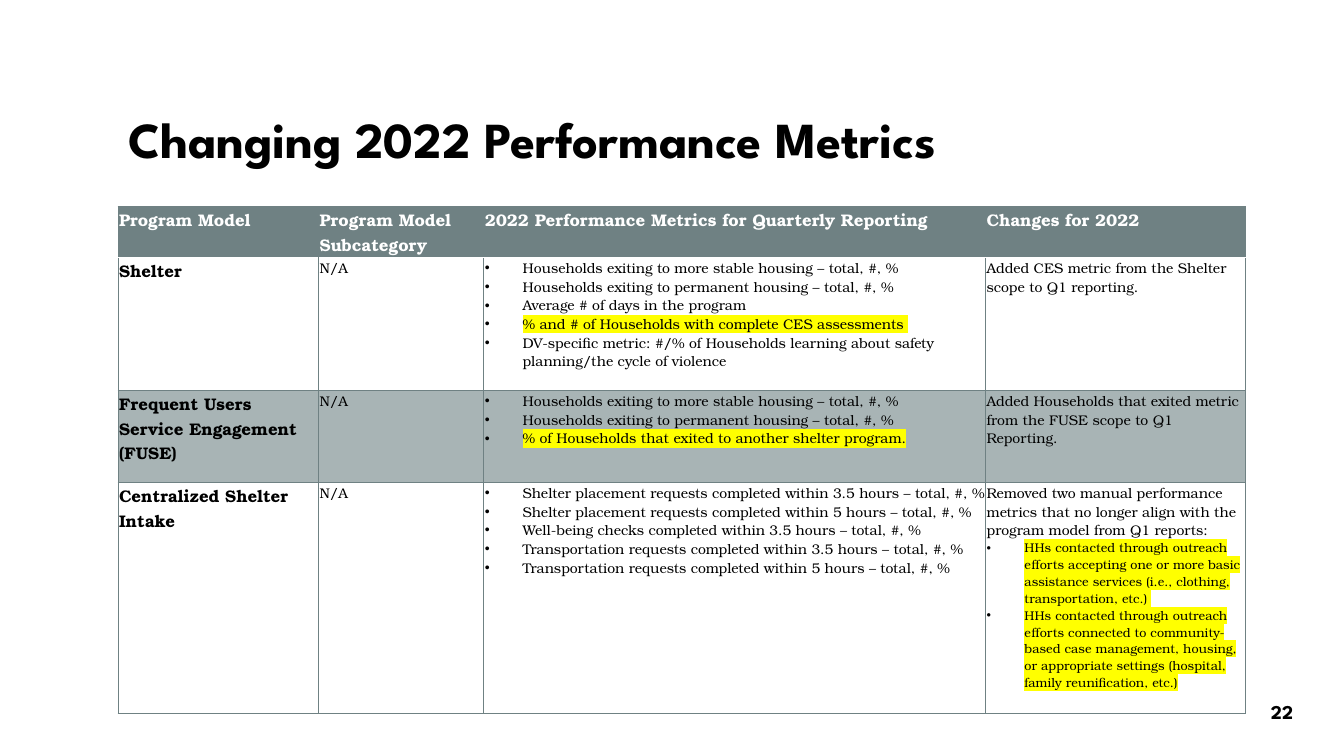
import pptx
import pptx.util
import pptx.dml.color
import pptx.enum.text
import pptx.oxml.ns
from lxml import etree

Pt = pptx.util.Pt
RGB = pptx.dml.color.RGBColor
ANCHOR = pptx.enum.text.MSO_ANCHOR
ALIGN = pptx.enum.text.PP_ALIGN
qn = pptx.oxml.ns.qn

BLACK = RGB(0x00, 0x00, 0x00)
WHITE = RGB(0xFF, 0xFF, 0xFF)
SLATE = RGB(0x6F, 0x81, 0x83)
MIST = RGB(0xA8, 0xB4, 0xB5)
YELLOW = RGB(0xFF, 0xFF, 0x00)
HEAD_FONT = "League Spartan"
BODY_FONT = "TeX Gyre Bonum"

TITLE = "Changing 2022 Performance Metrics"
NUMBER = "22"
STYLES = {
    "head": dict(size=12, bold=True, color=WHITE),
    "name": dict(size=12, bold=True),
    "plain": dict(size=10),
    "dot": dict(size=10, bullet=True),
    "hot": dict(size=10, bullet=True, mark=True),
    "small": dict(size=9, bullet=True, mark=True),
}
ROWS = [
    [
        [("head", "Program Model")],
        [("head", "Program Model Subcategory")],
        [("head", "2022 Performance Metrics for Quarterly Reporting")],
        [("head", "Changes for 2022")],
    ],
    [
        [("name", "Shelter")],
        [("plain", "N/A")],
        [
            ("dot", "Households exiting to more stable housing – total, #, % "),
            ("dot", "Households exiting to permanent housing – total, #, % "),
            ("dot", "Average # of days in the program "),
            ("hot", "% and # of Households with complete CES assessments "),
            ("dot", "DV-specific metric: #/% of Households learning about safety planning/the cycle of violence "),
        ],
        [("plain", "Added CES metric from the Shelter scope to Q1 reporting.")],
    ],
    [
        [("name", "Frequent Users Service Engagement (FUSE)")],
        [("plain", "N/A")],
        [
            ("dot", "Households exiting to more stable housing – total, #, % "),
            ("dot", "Households exiting to permanent housing – total, #, % "),
            ("hot", "% of Households that exited to another shelter program."),
        ],
        [("plain", "Added Households that exited metric from the FUSE scope to Q1 Reporting.")],
    ],
    [
        [("name", "Centralized Shelter Intake")],
        [("plain", "N/A")],
        [
            ("dot", "Shelter placement requests completed within 3.5 hours – total, #, % "),
            ("dot", "Shelter placement requests completed within 5 hours – total, #, % "),
            ("dot", "Well-being checks completed within 3.5 hours – total, #, % "),
            ("dot", "Transportation requests completed within 3.5 hours – total, #, % "),
            ("dot", "Transportation requests completed within 5 hours – total, #, % "),
        ],
        [
            ("plain", "Removed two manual performance metrics that no longer align with the program model from Q1 reports:"),
            ("small", "HHs contacted through outreach efforts accepting one or more basic assistance services (i.e., clothing, transportation, etc.) "),
            ("small", "HHs contacted through outreach efforts connected to community-based case management, housing, or appropriate settings (hospital, family reunification, etc.)"),
        ],
    ],
]
FILLS = [SLATE, WHITE, MIST, WHITE]
WIDTHS = [143.3, 118, 358.5, 185.7]
HEIGHTS = [36.6, 95, 65.7, 165]
LEFT, TOP = 84.3, 147.4
INSET = 0.72
INDENT = 27


def add_run(para, text, font, size, bold=False, color=BLACK, mark=False):
    run = para.add_run()
    run.text = text
    run.font.size = Pt(size)
    run.font.bold = bold
    run.font.color.rgb = color
    run.font.name = font
    if mark:
        light = etree.Element(qn("a:highlight"))
        etree.SubElement(light, qn("a:srgbClr"), val=str(YELLOW))
        run.font._element.find(qn("a:latin")).addprevious(light)


def add_bullet(para):
    props = para._p.get_or_add_pPr()
    props.set("marL", str(Pt(INDENT)))
    props.set("indent", str(-Pt(INDENT)))
    etree.SubElement(props, qn("a:buFont"), typeface="Arial")
    etree.SubElement(props, qn("a:buChar"), char="•")
    tabs = etree.SubElement(props, qn("a:tabLst"))
    etree.SubElement(tabs, qn("a:tab"), pos=str(Pt(36)), algn="l")


def fill_cell(cell, lines):
    cell.margin_left = cell.margin_right = Pt(INSET)
    cell.margin_top = cell.margin_bottom = Pt(INSET)
    frame = cell.text_frame
    for i, (kind, text) in enumerate(lines):
        para = frame.add_paragraph() if i else frame.paragraphs[0]
        style = dict(STYLES[kind])
        if style.pop("bullet", False):
            add_bullet(para)
        add_run(para, text, BODY_FONT, **style)


def add_edges(cell, row, col):
    edges = {side: (SLATE, 0.5) for side in ("lnL", "lnR", "lnT", "lnB")}
    if row == 0:
        edges["lnB"] = (WHITE, 1)
    elif col == 0:
        edges["lnR"] = (SLATE, 1)
    if row == 1:
        edges["lnT"] = (WHITE, 1)
    props = cell._tc.get_or_add_tcPr()
    for i, (side, (color, width)) in enumerate(edges.items()):
        line = etree.Element(qn("a:" + side), w=str(Pt(width)))
        solid = etree.SubElement(line, qn("a:solidFill"))
        etree.SubElement(solid, qn("a:srgbClr"), val=str(color))
        props.insert(i, line)


def add_title(slide):
    title = slide.shapes.title
    title.left, title.top, title.width, title.height = Pt(84.3), Pt(38), Pt(792), Pt(127)
    frame = title.text_frame
    frame.word_wrap = True
    frame.vertical_anchor = ANCHOR.MIDDLE
    para = frame.paragraphs[0]
    para.alignment = ALIGN.LEFT
    para.line_spacing = 0.9
    add_run(para, TITLE, HEAD_FONT, 36, True)


def add_grid(slide):
    frame = slide.shapes.add_table(
        len(ROWS), len(WIDTHS), Pt(LEFT), Pt(TOP), Pt(sum(WIDTHS)), Pt(sum(HEIGHTS)))
    table = frame.table
    table.first_row = table.horz_banding = False
    for col, width in zip(table.columns, WIDTHS):
        col.width = Pt(width)
    for r, cells in enumerate(ROWS):
        table.rows[r].height = Pt(HEIGHTS[r])
        for c, lines in enumerate(cells):
            cell = table.cell(r, c)
            fill_cell(cell, lines)
            cell.fill.solid()
            cell.fill.fore_color.rgb = FILLS[r]
            add_edges(cell, r, c)


def add_number(slide):
    box = slide.shapes.add_textbox(Pt(890.6), Pt(494), Pt(50.4), Pt(28.8))
    frame = box.text_frame
    frame.word_wrap = True
    frame.vertical_anchor = ANCHOR.MIDDLE
    para = frame.paragraphs[0]
    para.alignment = ALIGN.CENTER
    add_run(para, NUMBER, HEAD_FONT, 14, True)


def main():
    deck = pptx.Presentation()
    deck.slide_width, deck.slide_height = Pt(960), Pt(540)
    slide = deck.slides.add_slide(deck.slide_layouts[5])
    add_title(slide)
    add_grid(slide)
    add_number(slide)
    deck.save("out.pptx")


if __name__ == "__main__":
    main()
